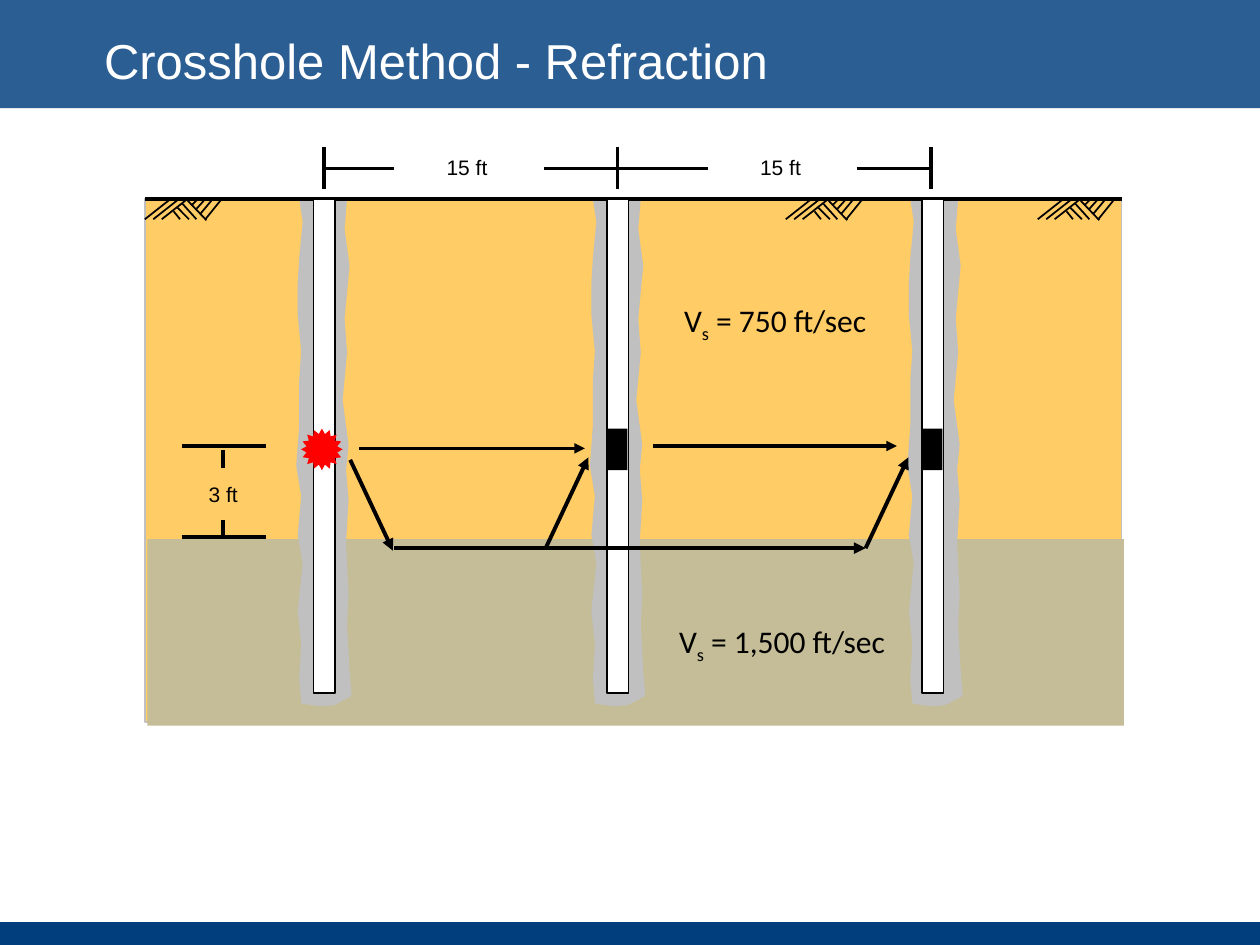
from lxml.etree import SubElement
from pptx import Presentation
from pptx.dml.color import RGBColor
from pptx.enum.shapes import MSO_CONNECTOR, MSO_SHAPE
from pptx.enum.text import MSO_ANCHOR, MSO_AUTO_SIZE, PP_ALIGN
from pptx.oxml.ns import qn
from pptx.util import Cm, Pt

NAVY = RGBColor(0x00, 0x3E, 0x7E)
WHITE = RGBColor(0xFF, 0xFF, 0xFF)
BLACK = RGBColor(0x00, 0x00, 0x00)
SAND = RGBColor(0xFF, 0xCC, 0x66)
ROCK = RGBColor(0xC4, 0xBD, 0x97)
GROUT = RGBColor(0xC0, 0xC0, 0xC0)
RED = RGBColor(0xFF, 0x00, 0x00)

GROUND = 4.01
SOIL_LEFT, SOIL_WIDTH = 2.92, 19.69
GROUT_LEFTS = [11.91, 18.31, 5.99]
CASING_LEFTS = [6.32, 12.24, 18.59]
TICKS = [6.53, 12.45, 18.77]
HATCH_LEFTS = [SOIL_LEFT, 15.84, 20.92]
SENSOR_TOP, SENSOR_HEIGHT = 8.64, 0.84

GROUT_OUTLINE = [
    (0.06, 0), (0.13, 0.46), (0.06, 1.19), (0.03, 1.7), (0.03, 2.34),
    (0.1, 3.07), (0.06, 3.66), (0.06, 4.57), (0, 5.38), (0.1, 5.99),
    (0.03, 6.78), (0.13, 7.34), (0.03, 8.31), (0.1, 8.97), (0.06, 9.68),
    (0.1, 10.16), (0.46, 10.21), (0.74, 10.19), (1.08, 10.01), (1.04, 9.5),
    (0.99, 8.59), (1.02, 7.98), (0.97, 6.93), (1.02, 6.07), (0.97, 5.46),
    (1.02, 4.95), (0.9, 4.06), (0.99, 3.1), (0.94, 2.41), (1.04, 1.35),
    (0.94, 0.61), (0.99, 0),
]
HATCH_STROKES = [(0.52 + 0.17 * i, 0, 0.17 * i, 0.41) for i in range(3)] + [
    (0.58, 0.25, 0.71, 0.41), (0.66, 0.18, 0.89, 0.41),
    (0.76, 0.1, 1.04, 0.41), (0.86, 0.03, 1.24, 0.43),
    (1.07, 0, 0.94, 0.13), (1.22, 0, 1.04, 0.2),
    (1.37, 0, 1.12, 0.3), (1.55, 0, 1.22, 0.41),
]


class Sketch:
    label_font = "Arial"
    formula_font = "Calibri"

    def __init__(self, slide):
        self.slide = slide

    def paint(self, shape, fill, outline):
        shape.shadow.inherit = False
        shape.fill.solid()
        shape.fill.fore_color.rgb = fill
        if outline is None:
            shape.line.fill.background()
        else:
            shape.line.color.rgb = outline
            shape.line.width = Pt(1)

    def shape(self, left, top, width, height, fill, outline=None,
              kind=MSO_SHAPE.RECTANGLE, opacity=None):
        shape = self.slide.shapes.add_shape(
            kind, Cm(left), Cm(top), Cm(width), Cm(height))
        self.paint(shape, fill, outline)
        if opacity is not None:
            color = shape._element.spPr.find(qn("a:solidFill"))[0]
            SubElement(color, qn("a:alpha"), val=str(opacity * 1000))
        return shape

    def outline(self, left, top, points, color):
        corners = [(Cm(left + x), Cm(top + y)) for x, y in points]
        builder = self.slide.shapes.build_freeform(*corners[0])
        builder.add_line_segments(corners[1:], close=True)
        self.paint(builder.convert_to_shape(), color, color)

    def line(self, x1, y1, x2, y2, weight=2, arrow=False):
        line = self.slide.shapes.add_connector(
            MSO_CONNECTOR.STRAIGHT, Cm(x1), Cm(y1), Cm(x2), Cm(y2))
        line.line.color.rgb = BLACK
        line.line.width = Pt(weight)
        if arrow:
            SubElement(line.line._get_or_add_ln(), qn("a:tailEnd"), type="triangle")
        SubElement(line._element.spPr, qn("a:effectLst"))

    def text(self, left, top, width, height, runs, size, font,
             color=BLACK, align=PP_ALIGN.LEFT, anchor=MSO_ANCHOR.TOP, wrap=False):
        box = self.slide.shapes.add_textbox(Cm(left), Cm(top), Cm(width), Cm(height))
        frame = box.text_frame
        frame.word_wrap = wrap
        frame.auto_size = MSO_AUTO_SIZE.NONE if wrap else MSO_AUTO_SIZE.SHAPE_TO_FIT_TEXT
        frame.vertical_anchor = anchor
        paragraph = frame.paragraphs[0]
        paragraph.alignment = align
        for words, baseline in runs:
            run = paragraph.add_run()
            run.text = words
            run.font.size = Pt(size)
            run.font.name = font
            run.font.color.rgb = color
            if baseline:
                run._r.get_or_add_rPr().set("baseline", str(baseline * 1000))

    def label(self, left, top, width, words):
        self.text(left, top, width, 0.76, [(words, 0)], 12, self.label_font,
                  align=PP_ALIGN.CENTER)

    def velocity(self, left, top, width, value):
        runs = [("V", 0), ("s", -25), (f" = {value} ft/sec", 0)]
        self.text(left, top, width, 1.02, runs, 18, self.formula_font)


def main():
    deck = Presentation()
    deck.slide_width, deck.slide_height = Cm(25.4), Cm(19.05)
    sketch = Sketch(deck.slides.add_slide(deck.slide_layouts[6]))

    sketch.shape(0, 18.59, 25.4, 0.46, NAVY)
    sketch.shape(0, 0, 25.4, 2.18, NAVY, opacity=83)
    sketch.text(1.85, 0.48, 17.2, 1.47, [("Crosshole Method - Refraction", 0)], 28,
                sketch.label_font, WHITE, anchor=MSO_ANCHOR.MIDDLE, wrap=True)

    sketch.shape(SOIL_LEFT, GROUND, SOIL_WIDTH, 10.54, SAND, GROUT)
    sketch.shape(2.97, 10.87, SOIL_WIDTH, 3.76, ROCK)
    for left in GROUT_LEFTS:
        sketch.outline(left, GROUND, GROUT_OUTLINE, GROUT)
    sketch.line(SOIL_LEFT, GROUND, SOIL_LEFT + SOIL_WIDTH, GROUND)
    for left in HATCH_LEFTS:
        for x1, y1, x2, y2 in HATCH_STROKES:
            sketch.line(left + x1, GROUND + y1, left + x2, GROUND + y2, weight=1)

    for left in CASING_LEFTS:
        sketch.shape(left, GROUND, 0.43, 9.96, WHITE, BLACK)
    source = sketch.shape(6.07, SENSOR_TOP, SENSOR_HEIGHT, SENSOR_HEIGHT, RED,
                          kind=MSO_SHAPE.STAR_16_POINT)
    source.adjustments[0] = 0.375
    for left in CASING_LEFTS[1:]:
        sketch.shape(left, SENSOR_TOP, 0.41, SENSOR_HEIGHT, BLACK)

    for start, end, y in [(7.24, 11.79, 9.04), (13.16, 18.08, 8.99)]:
        sketch.line(start, y, end, y, arrow=True)

    for x in TICKS:
        sketch.line(x, 2.97, x, 3.81)
    for start, end in [(TICKS[0], 7.95), (10.97, TICKS[1]),
                       (TICKS[1], 14.27), (17.27, TICKS[2])]:
        sketch.line(start, 3.4, end, 3.4)
    for left in (8.74, 15.06):
        sketch.label(left, 3, 1.35, "15 ft")

    sketch.velocity(13.54, 5.94, 4.32, "750")
    sketch.velocity(13.44, 12.42, 4.72, "1,500")

    for y in (8.99, 10.82):
        sketch.line(3.66, y, 5.36, y, weight=2.25)
    for top in (9.07, 10.49):
        sketch.line(4.5, top, 4.5, top + 0.36, weight=2.25)
    sketch.label(3.94, 9.58, 1.12, "3 ft")

    for ray in [(7.06, 9.27, 7.92, 11.1), (11, 11.05, 11.86, 9.22),
                (7.95, 11.05, 17.45, 11.05), (17.45, 11.05, 18.31, 9.22)]:
        sketch.line(*ray, weight=2.25, arrow=True)

    deck.save("out.pptx")


if __name__ == "__main__":
    main()
